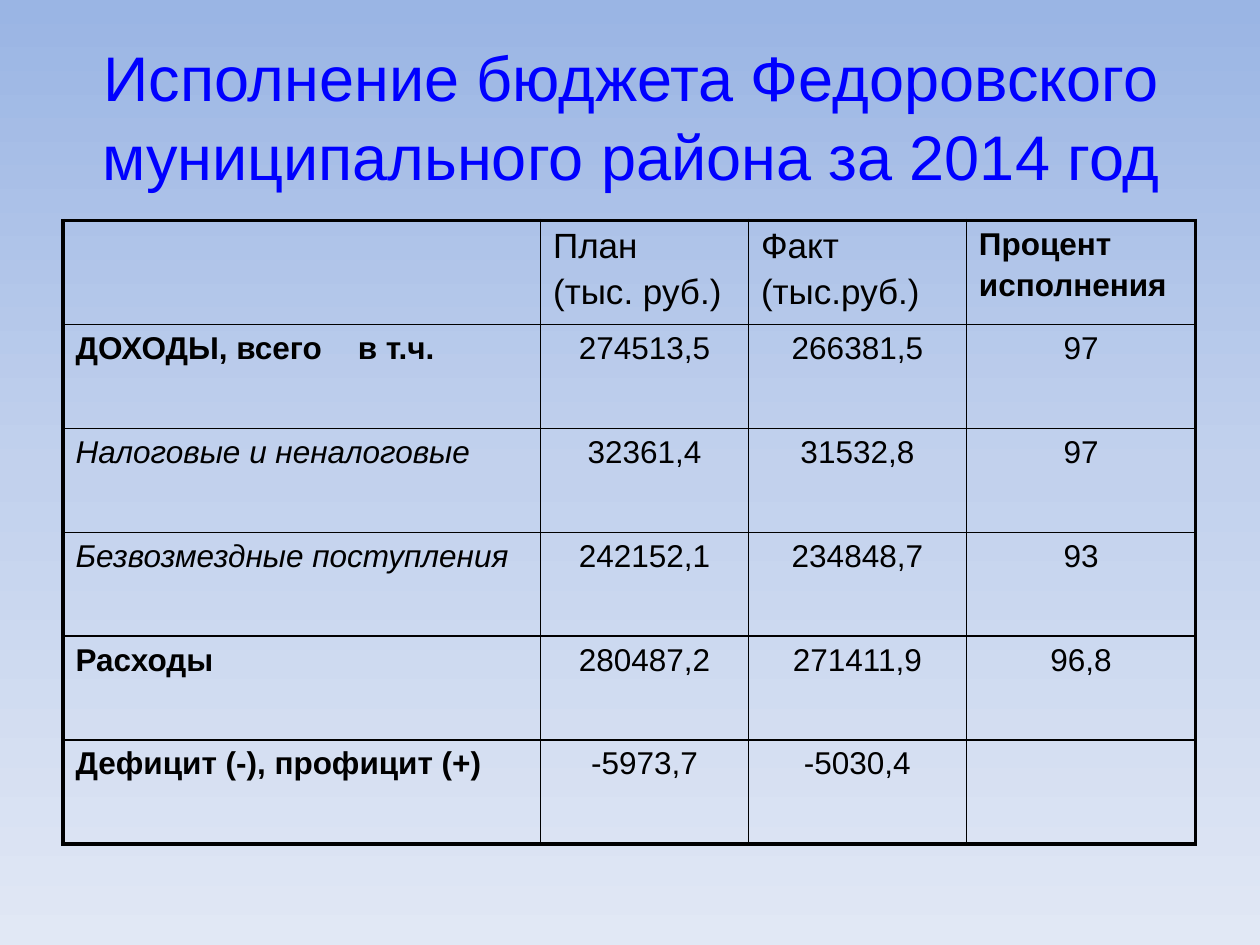
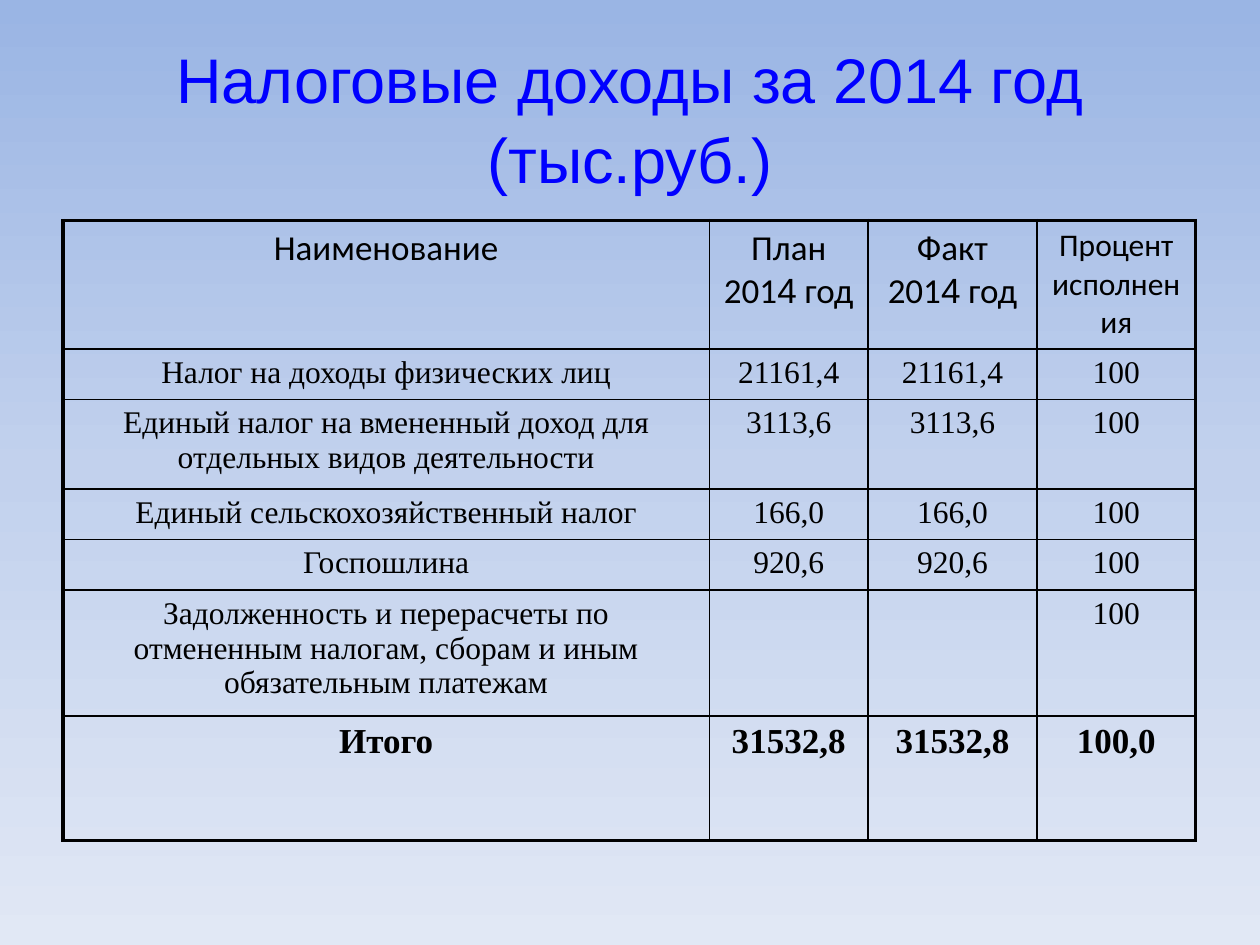
from copy import deepcopy
from dataclasses import dataclass

from lxml import etree
from pptx import Presentation
from pptx.dml.color import RGBColor
from pptx.enum.text import MSO_ANCHOR, PP_ALIGN
from pptx.oxml.ns import qn
from pptx.util import Inches, Pt

LEFT, CENTER = PP_ALIGN.LEFT, PP_ALIGN.CENTER
MIDDLE = MSO_ANCHOR.MIDDLE


@dataclass(frozen=True)
class TextStyle:
    size: int
    font: str = "Arial"
    bold: bool = False
    italic: bool = False
    align: int = CENTER
    color: str = "000000"


@dataclass(frozen=True)
class Theme:
    background = ((0, "9AB5E4"), (0.5, "C2D1ED"), (1, "E1E8F5"))
    line_color = "000000"
    inner_line = Pt(1)
    outer_line = Pt(2.25)
    accent_font = "Arial"
    paragraph_gap = 0.2
    title = TextStyle(36, color="0000FF")
    unit_header = TextStyle(20, align=LEFT)
    percent_header = TextStyle(18, bold=True, align=LEFT)
    total_label = TextStyle(18, bold=True, align=LEFT)
    part_label = TextStyle(18, italic=True, align=LEFT)
    amount = TextStyle(18)
    tax_header = TextStyle(20, "Calibri")
    tax_percent_header = TextStyle(18, "Calibri")
    tax = TextStyle(18, "Times New Roman")
    tax_total = TextStyle(20, "Times New Roman", bold=True)


class BudgetDeck:
    def __init__(self, theme):
        self.theme = theme
        self.prs = Presentation()
        self.prs.slide_width, self.prs.slide_height = Inches(10), Inches(7.5)
        self.slide = None
        self.paint_background()

    def paint_background(self):
        """Vertical gradient on the master, shared by all slides."""
        master = self.prs.slide_master
        fill = master.background.fill
        fill.gradient()
        fill.gradient_angle = 270
        stops = master.element.find(".//" + qn("a:gsLst"))
        stops.append(deepcopy(stops[0]))
        for stop, (position, color) in zip(fill.gradient_stops, self.theme.background):
            stop.position = position
            stop.color.rgb = RGBColor.from_string(color)

    def add_slide(self):
        self.slide = self.prs.slides.add_slide(self.prs.slide_layouts[6])

    def set_text(self, frame, text, style):
        """One paragraph per line; text between bars takes the accent font."""
        frame.text = text.replace("|", "")
        for number, (paragraph, line) in enumerate(zip(frame.paragraphs, text.split("\n"))):
            paragraph.alignment = style.align
            if number:
                paragraph.space_before = Pt(style.size * self.theme.paragraph_gap)
            pieces = line.split("|")
            paragraph.text = pieces[0]
            for piece in pieces[1:]:
                paragraph.add_run().text = piece
            for index, run in enumerate(paragraph.runs):
                font = run.font
                font.name = self.theme.accent_font if index % 2 else style.font
                font.size = Pt(style.size)
                font.bold, font.italic = style.bold, style.italic
                font.color.rgb = RGBColor.from_string(style.color)

    def add_title(self, text, left, top):
        box = self.slide.shapes.add_textbox(Inches(left), Inches(top), Inches(9), Inches(1.25))
        frame = box.text_frame
        frame.word_wrap = True
        frame.vertical_anchor = MIDDLE
        self.set_text(frame, text, self.theme.title)
        frame.paragraphs[0].line_spacing = 1.05

    def add_borders(self, cell, outer_sides):
        properties = cell._tc.get_or_add_tcPr()
        for index, side in enumerate("LRTB"):
            width = self.theme.outer_line if side in outer_sides else self.theme.inner_line
            line = etree.Element(qn(f"a:ln{side}"), w=str(width))
            fill = etree.SubElement(line, qn("a:solidFill"))
            etree.SubElement(fill, qn("a:srgbClr"), val=self.theme.line_color)
            properties.insert(index, line)

    def add_table(self, rows, styles, widths, heights):
        """Rows of text with a matching style for every cell."""
        table = self.slide.shapes.add_table(
            len(rows), len(widths), Inches(0.5), Inches(1.75),
            Inches(sum(widths)), Inches(sum(heights))).table
        table.first_row = table.horz_banding = False
        for column, width in zip(table.columns, widths):
            column.width = Inches(width)
        for row, height in zip(table.rows, heights):
            row.height = Inches(height)
        last_row, last_column = len(rows) - 1, len(widths) - 1
        for r, (texts, row_styles) in enumerate(zip(rows, styles)):
            for c, (text, style) in enumerate(zip(texts, row_styles)):
                cell = table.cell(r, c)
                cell.fill.background()
                self.set_text(cell.text_frame, text, style)
                edges = {"L": c == 0, "R": c == last_column, "T": r == 0, "B": r == last_row}
                self.add_borders(cell, [side for side, outer in edges.items() if outer])
        return table

    def add_tab_stop(self, cell, position):
        properties = cell.text_frame.paragraphs[0]._p.get_or_add_pPr()
        tabs = etree.SubElement(properties, qn("a:tabLst"))
        etree.SubElement(tabs, qn("a:tab"), pos=str(Inches(position)), algn="l")


def add_budget_slide(deck):
    theme = deck.theme
    deck.add_slide()
    deck.add_title("Исполнение бюджета Федоровского муниципального района за 2014 год", 0.51, 0.28)
    budget = [
        ("", "План\n(тыс. руб.)", "Факт\n(тыс.руб.)", "Процент\nисполнения"),
        ("ДОХОДЫ, всего\tв т.ч.", "274513,5", "266381,5", "97"),
        ("Налоговые и неналоговые", "32361,4", "31532,8", "97"),
        ("Безвозмездные поступления", "242152,1", "234848,7", "93"),
        ("Расходы", "280487,2", "271411,9", "96,8"),
        ("Дефицит (-), профицит (+)", "-5973,7", "-5030,4", ""),
    ]
    total = [theme.total_label] + [theme.amount] * 3
    part = [theme.part_label] + [theme.amount] * 3
    header = [theme.unit_header] * 3 + [theme.percent_header]
    table = deck.add_table(budget, [header, total, part, part, total, total],
                           [3.79, 1.65, 1.73, 1.82], [4.95 / len(budget)] * len(budget))
    deck.add_tab_stop(table.cell(1, 0), 2.24)


def add_tax_slide(deck):
    theme = deck.theme
    deck.add_slide()
    deck.add_title("Налоговые доходы за 2014 год (тыс.руб.)", 0.5, 0.3)
    taxes = [
        ("Наименование", "План 201|4| год", "Факт 201|4| год", "Процент исполнения"),
        ("Налог на доходы физических лиц", "21161,4", "21161,4", "100"),
        ("Единый налог на вмененный доход для отдельных видов деятельности",
         "3113,6", "3113,6", "100"),
        ("Единый сельскохозяйственный налог", "166,0", "166,0", "100"),
        ("Госпошлина", "920,6", "920,6", "100"),
        ("Задолженность и перерасчеты по отмененным налогам, сборам и иным "
         "обязательным платежам", "", "", "100"),
        ("Итого", "31532,8", "31532,8", "100,0"),
    ]
    header = [theme.tax_header] * 3 + [theme.tax_percent_header]
    styles = [header] + [[theme.tax] * 4] * 5 + [[theme.tax_total] * 4]
    deck.add_table(taxes, styles, [5.13, 1.26, 1.34, 1.26],
                   [1.02, 0.38, 0.71, 0.4, 0.38, 0.93, 0.99])


def main():
    deck = BudgetDeck(Theme())
    add_budget_slide(deck)
    add_tax_slide(deck)
    deck.prs.save("out.pptx")


if __name__ == "__main__":
    main()
